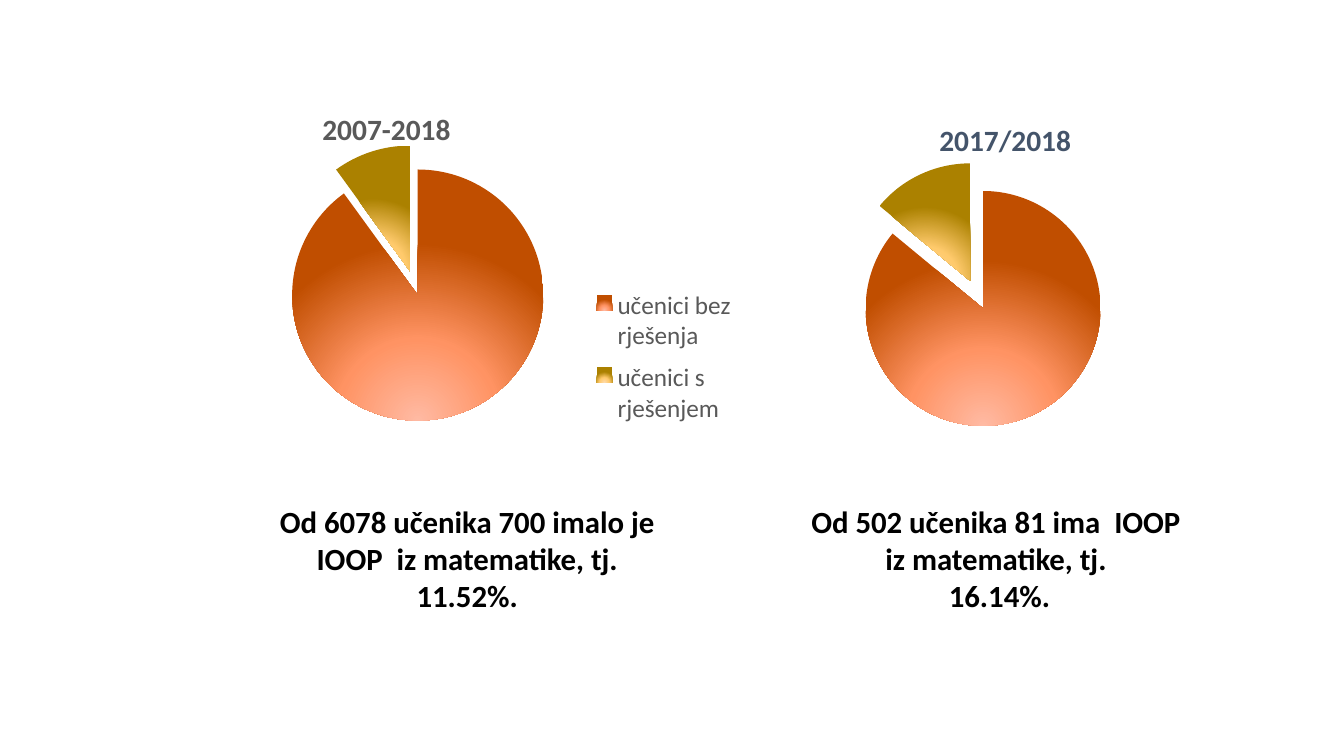
"""Builds a slide with two exploded pie charts and their captions."""
from pptx import Presentation
from pptx.chart.data import CategoryChartData
from pptx.dml.color import RGBColor
from pptx.enum.chart import XL_CHART_TYPE, XL_LEGEND_POSITION
from pptx.enum.text import MSO_AUTO_SIZE, PP_ALIGN
from pptx.oxml import parse_xml
from pptx.oxml.ns import nsdecls, qn
from pptx.util import Pt

PIE = XL_CHART_TYPE.PIE
RIGHT = XL_LEGEND_POSITION.RIGHT
CENTER = PP_ALIGN.CENTER
GROW = MSO_AUTO_SIZE.SHAPE_TO_FIT_TEXT

FONT = "Calibri"
COLORS = {"black": "000000", "grey": "595959", "slate": "44546A"}
SLICES = {
    1: ("FFBAA3", "FF9363", "C04E00"),
    3: ("FFDCAB", "FFCA6C", "AB8100"),
}
STOPS = (0, 46000, 100000)


class PieSlide:
    """Holds the style and the current slide."""

    def __init__(self, s):
        self.s = s

    def style(self, font, size, color, bold=False):
        font.name, font.size, font.bold = FONT, Pt(size), bold
        font.color.rgb = RGBColor.from_string(COLORS[color])

    def place(self, parent, x, y, w=None, h=None, inner=False):
        for old in parent.findall(qn("c:layout")):
            parent.remove(old)
        parts = '<c:layoutTarget val="inner"/>' if inner else ""
        parts += '<c:xMode val="edge"/><c:yMode val="edge"/>'
        for tag, value in zip("xywh", (x, y, w, h)):
            if value is not None:
                parts += f'<c:{tag} val="{value}"/>'
        layout = parse_xml(f'<c:layout {nsdecls("c")}><c:manualLayout>{parts}'
                           '</c:manualLayout></c:layout>')
        overlay = parent.find(qn("c:overlay"))
        if overlay is None:
            parent.insert(0, layout)
        else:
            overlay.addprevious(layout)

    def shade(self, point, colors):
        point.format.line.fill.background()
        stops = "".join(f'<a:gs pos="{pos}"><a:srgbClr val="{color}"/></a:gs>'
                        for pos, color in zip(STOPS, colors))
        fill = parse_xml(
            f'<a:gradFill {nsdecls("a")} rotWithShape="1"><a:gsLst>{stops}</a:gsLst>'
            '<a:path path="circle"><a:fillToRect l="50000" t="155000" '
            'r="50000" b="-55000"/></a:path></a:gradFill>')
        point.format.line.fill
        return fill

    def explode(self, before, percent):
        before.addprevious(parse_xml(
            f'<c:explosion {nsdecls("c")} val="{percent}"/>'))

    def pie(self, box, cats, values, title, color, title_at, plot_at):
        data = CategoryChartData()
        data.categories = cats
        data.add_series("Series 1", values)
        chart = self.s.shapes.add_chart(PIE, *map(Pt, box), data).chart
        self.style(chart.font, 10, "black")
        chart.has_legend = False
        chart.has_title = True
        tf = chart.chart_title.text_frame
        tf.text = title
        self.style(tf.paragraphs[0].runs[0].font, 21, color, True)
        chart.chart_title.include_in_layout = False
        self.place(chart.element.xpath("//c:title")[0], *title_at)
        self.place(chart.element.xpath("//c:plotArea")[0], *plot_at, inner=True)
        plot = chart.plots[0]
        plot.vary_by_categories = True
        for index, colors in SLICES.items():
            fill = self.shade(plot.series[0].points[index], colors)
            chart.element.xpath("//c:dPt/c:spPr")[-1].insert(0, fill)
        return chart

    def legend(self, chart, hidden, at):
        chart.has_legend = True
        chart.legend.position = RIGHT
        chart.legend.include_in_layout = False
        self.style(chart.legend.font, 18, "grey")
        legend = chart.element.xpath("//c:legend")[0]
        self.place(legend, *at)
        for index in hidden:
            legend.find(qn("c:layout")).addprevious(parse_xml(
                f'<c:legendEntry {nsdecls("c")}><c:idx val="{index}"/>'
                '<c:delete val="1"/></c:legendEntry>'))

    def caption(self, left, text):
        tf = self.s.shapes.add_textbox(Pt(left), Pt(355.7), Pt(291.6), Pt(87.1)).text_frame
        tf.word_wrap = True
        tf.auto_size = GROW
        tf.text = text
        for p in tf.paragraphs:
            p.alignment = CENTER
            for r in p.runs:
                self.style(r.font, 22, "black", True)


def main():
    prs = Presentation()
    prs.slide_width, prs.slide_height = Pt(960), Pt(540)
    page = PieSlide(prs.slides.add_slide(prs.slide_layouts[6]))

    decade = page.pie((18.7, 59.8, 532.8, 278.6),
                      ("", "učenici bez rješenja", "", "učenici s rješenjem"),
                      (None, 90, None, 10), "2007-2018", "grey",
                      (0.39, 0.05), (0.286, 0.22, 0.478, 0.644))
    page.explode(decade.element.xpath("//c:dPt/c:spPr")[-1], 20)
    page.legend(decade, (0, 2), (0.75, 0.5, 0.21, 0.4))

    year = page.pie((551.5, 67, 324.7, 249.1), ("1", "2", "3", "4"),
                    (None, 86, None, 14), "2017/2018", "slate",
                    (0.356, 0.06), (0.158, 0.193, 0.584, 0.766))
    page.explode(year.element.xpath("//c:dPt")[0], 13)

    page.caption(187.9, "Od 6078 učenika 700 imalo je IOOP  iz matematike, tj. 11.52%.")
    page.caption(568.1, "Od 502 učenika 81 ima  IOOP  iz matematike, tj. \n16.14%.")
    prs.save("out.pptx")


if __name__ == "__main__":
    main()
